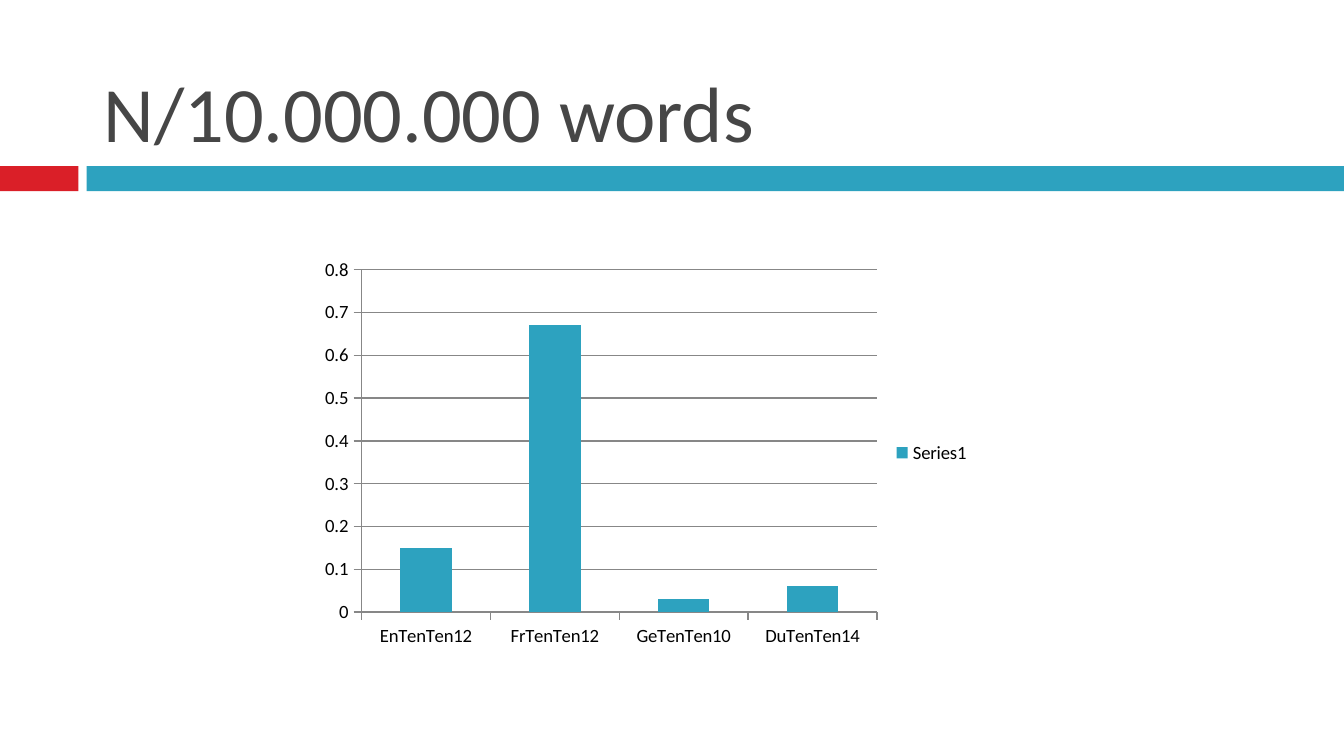
"""Build a slide with a column chart of frequencies per ten million words."""
from pptx import Presentation
from pptx.chart.data import CategoryChartData
from pptx.dml.color import RGBColor
from pptx.enum.chart import XL_CHART_TYPE, XL_LEGEND_POSITION, XL_TICK_MARK
from pptx.enum.shapes import MSO_SHAPE
from pptx.enum.text import MSO_ANCHOR
from pptx.util import Pt

RED = RGBColor(0xDA, 0x1F, 0x28)
TEAL = RGBColor(0x2D, 0xA2, 0xBF)
DARK_GREY = RGBColor(0x46, 0x46, 0x46)
AXIS_GREY = RGBColor(0x87, 0x87, 0x87)
BLACK = RGBColor(0, 0, 0)
FONT = "Calibri"
FREQUENCIES = {
    "EnTenTen12": 0.15,
    "FrTenTen12": 0.67,
    "GeTenTen10": 0.03,
    "DuTenTen14": 0.06,
}


def style_font(font, size, color):
    font.name = FONT
    font.size = Pt(size)
    font.color.rgb = color


def style_line(line):
    line.color.rgb = AXIS_GREY
    line.width = Pt(0.75)


def add_bar(page, left, width, color):
    bar = page.shapes.add_shape(
        MSO_SHAPE.RECTANGLE, Pt(left), Pt(89), Pt(width), Pt(13.5))
    bar.shadow.inherit = False
    bar.fill.solid()
    bar.fill.fore_color.rgb = color
    bar.line.fill.background()


def add_title(page, text):
    box = page.shapes.add_textbox(Pt(48.4), Pt(9.4), Pt(642), Pt(79))
    frame = box.text_frame
    frame.word_wrap = True
    frame.vertical_anchor = MSO_ANCHOR.BOTTOM
    frame.text = text
    style_font(frame.paragraphs[0].runs[0].font, 42, DARK_GREY)


def add_column_chart(page, frequencies):
    chart_data = CategoryChartData()
    chart_data.categories = list(frequencies)
    chart_data.add_series("Series1", list(frequencies.values()))
    chart = page.shapes.add_chart(
        XL_CHART_TYPE.COLUMN_CLUSTERED,
        Pt(167), Pt(134.6), Pt(360), Pt(216), chart_data).chart
    style_font(chart.font, 10, BLACK)
    chart.has_title = False
    chart.has_legend = True
    chart.legend.position = XL_LEGEND_POSITION.RIGHT
    chart.legend.include_in_layout = False

    plot = chart.plots[0]
    plot.gap_width = 150
    plot.vary_by_categories = False
    fill = plot.series[0].format.fill
    fill.solid()
    fill.fore_color.rgb = TEAL

    for axis in (chart.category_axis, chart.value_axis):
        axis.major_tick_mark = XL_TICK_MARK.OUTSIDE
        style_line(axis.format.line)
    values = chart.value_axis
    values.minimum_scale = 0
    values.maximum_scale = 0.8
    values.major_unit = 0.1
    values.has_major_gridlines = True
    style_line(values.major_gridlines.format.line)


def main():
    deck = Presentation()
    deck.slide_width = Pt(720)
    deck.slide_height = Pt(405)
    page = deck.slides.add_slide(deck.slide_layouts[6])
    add_bar(page, 0, 42, RED)
    add_bar(page, 46.5, 673.5, TEAL)
    add_title(page, "N/10.000.000 words")
    add_column_chart(page, FREQUENCIES)
    deck.save("out.pptx")


if __name__ == "__main__":
    main()
